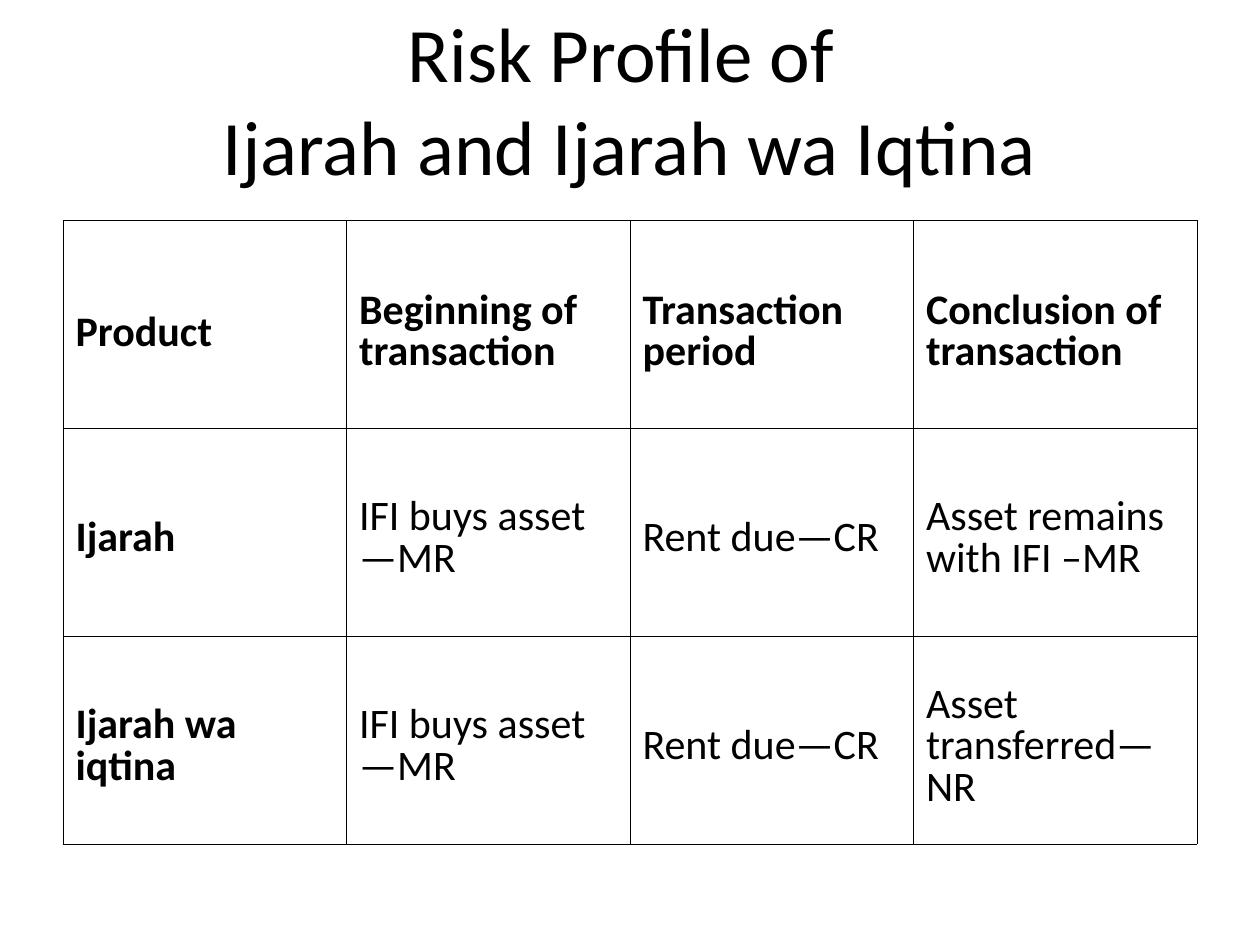
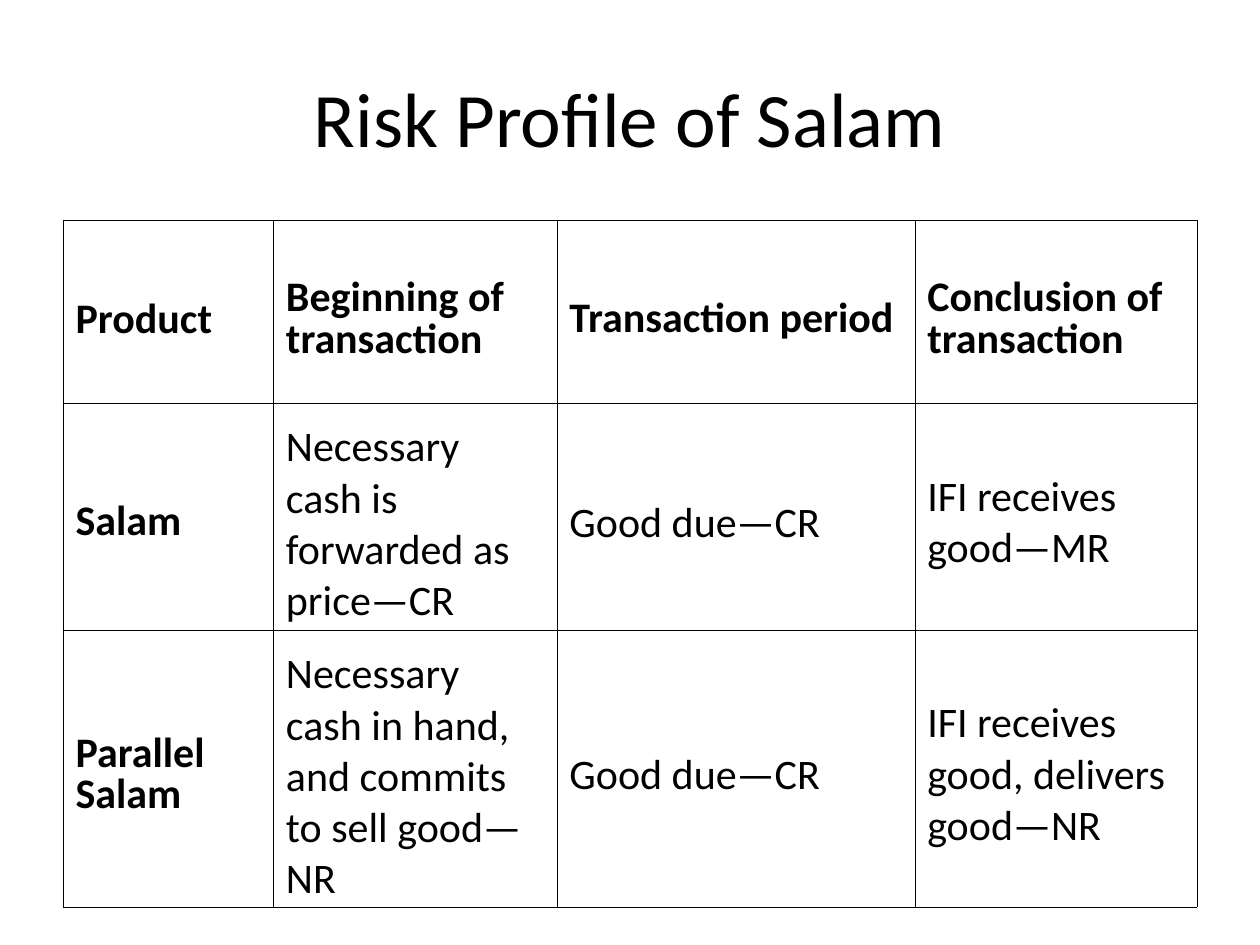
"""Build two slides on the risk profiles of Ijarah and Salam."""
from lxml import etree
from pptx import Presentation
from pptx.dml.color import RGBColor
from pptx.enum.text import MSO_ANCHOR, PP_ALIGN
from pptx.oxml.ns import qn
from pptx.util import Pt

PX = 9144
BLACK = RGBColor(0, 0, 0)
MID = MSO_ANCHOR.MIDDLE
CENTER = PP_ALIGN.CENTER
LEFT, TOP, WIDE = 50, 175, 900
THIN, THICK = Pt(0.11), Pt(0.23)
TIGHT = 0.81

HEAD = ["Product", "Beginning of transaction", "Transaction period",
        "Conclusion of transaction"]
SLIDES = [
    {"title": "Risk Profile of \vIjarah and Ijarah wa Iqtina",
     "top": 14, "high": 128, "cols": [225] * 4, "rows": [165] * 3,
     "frame": 495, "inset": 16, "space": TIGHT,
     "body": [
         ["Ijarah", "IFI buys asset—MR", "Rent due—CR",
          "Asset remains with IFI –MR"],
         ["Ijarah wa iqtina", "IFI buys asset—MR", "Rent due—CR",
          "Asset transferred—NR"]]},
    {"title": "Risk Profile of Salam",
     "top": 30, "high": 125, "cols": [167, 225, 284, 224],
     "rows": [145, 151, 199], "frame": 545, "inset": 15, "space": 1.0,
     "body": [
         ["Salam", "Necessary cash is forwarded as price—CR",
          "Good due—CR", "IFI receives good—MR"],
         ["Parallel Salam",
          "Necessary cash in hand, and commits to sell good—NR",
          "Good due—CR", "IFI receives good, delivers good—NR"]]},
]


def write(frame, text, **look):
    para = frame.paragraphs[0]
    para.text = text
    for run in para.runs:
        run.font.color.rgb = BLACK
        for key, value in {"name": "Calibri", **look}.items():
            setattr(run.font, key, value)
    return para


def edge(cell, side, width):
    line = etree.SubElement(cell._tc.get_or_add_tcPr(), qn(f"a:ln{side}"),
                            w=str(int(width)))
    fill = etree.SubElement(line, qn("a:solidFill"))
    etree.SubElement(fill, qn("a:srgbClr"), val=str(BLACK))


deck = Presentation()
deck.slide_width, deck.slide_height = 1000 * PX, 750 * PX

for data in SLIDES:
    slide = deck.slides.add_slide(deck.slide_layouts[6])
    box = slide.shapes.add_textbox(LEFT * PX, data["top"] * PX,
                                   WIDE * PX, data["high"] * PX)
    box.text_frame.word_wrap = True
    box.text_frame.vertical_anchor = MID
    write(box.text_frame, data["title"], size=Pt(44)).alignment = CENTER

    grid = [HEAD] + data["body"]
    holder = slide.shapes.add_table(len(grid), len(HEAD), LEFT * PX, TOP * PX,
                                    WIDE * PX, data["frame"] * PX)
    table = holder.table
    table.first_row = table.horz_banding = False
    for col, width in zip(table.columns, data["cols"]):
        col.width = width * PX
    for row, height in zip(table.rows, data["rows"]):
        row.height = height * PX
    holder.height = data["frame"] * PX

    for r, words in enumerate(grid):
        for c, text in enumerate(words):
            cell = table.cell(r, c)
            label = r == 0 or c == 0
            if r == 0:
                inset = 18 if c else 20
            else:
                inset = data["inset"] if c else 16
            para = write(cell.text_frame, text, size=Pt(24), bold=label)
            para.line_spacing = TIGHT if label else data["space"]
            form = {"margin_left": 10 * PX, "margin_right": 10 * PX,
                    "margin_top": inset * PX, "margin_bottom": 5 * PX,
                    "vertical_anchor": MID}
            for key, value in form.items():
                setattr(cell, key, value)
            outer = {"L": c == 0, "R": c == len(HEAD) - 1,
                     "T": r == 0, "B": r == len(grid) - 1}
            for side, rim in outer.items():
                edge(cell, side, THICK if rim else THIN)
            cell.fill.background()

deck.save("out.pptx")
